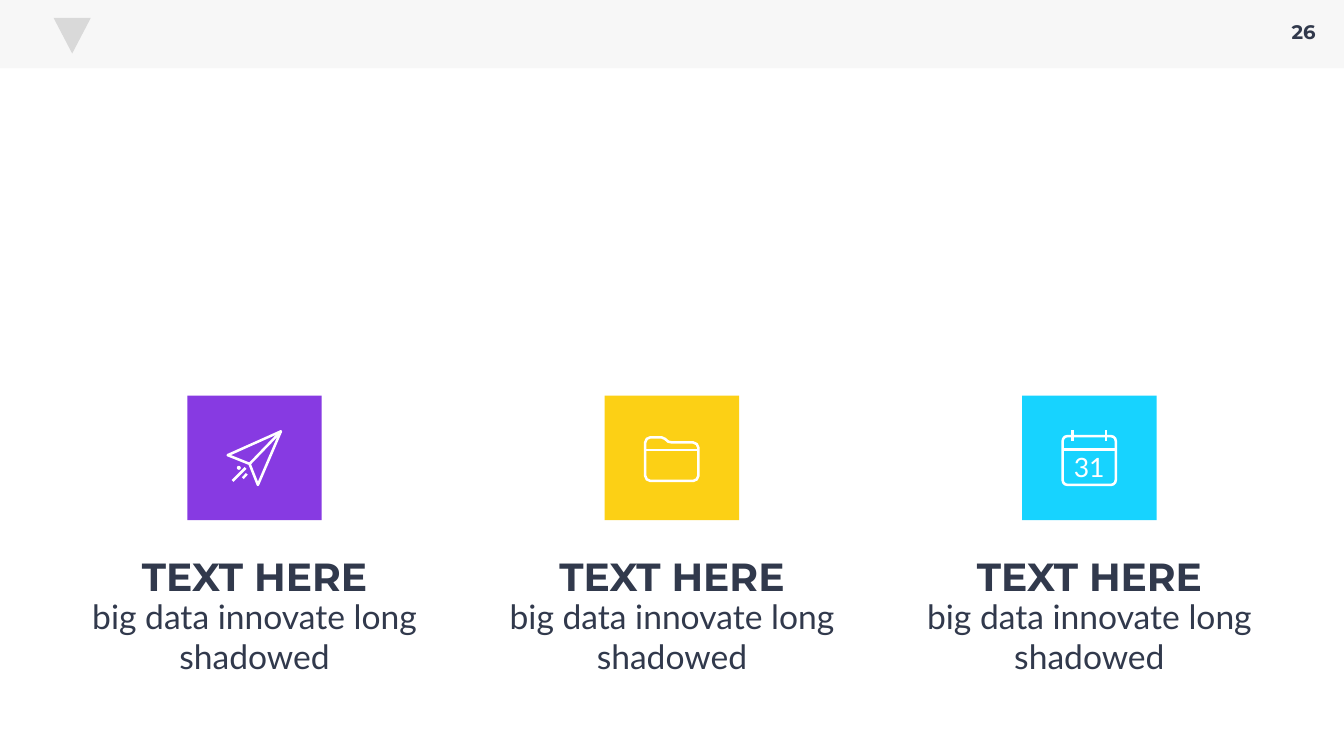
from pptx import Presentation
from pptx.dml.color import RGBColor
from pptx.enum.shapes import MSO_SHAPE
from pptx.enum.text import MSO_ANCHOR, PP_ALIGN
from pptx.util import Cm, Pt
from lxml import etree

RECTANGLE = MSO_SHAPE.RECTANGLE
ROUNDED = MSO_SHAPE.ROUNDED_RECTANGLE
OVAL = MSO_SHAPE.OVAL
MERGE = MSO_SHAPE.FLOWCHART_MERGE
CENTER = PP_ALIGN.CENTER
MIDDLE = MSO_ANCHOR.MIDDLE
EFFECT_LIST = "{http://schemas.openxmlformats.org/drawingml/2006/main}effectLst"
STRAIGHT = 1

WHITE = "FFFFFF"
INK = "31394C"
ICON_LINE = Pt(1.8)

presentation = Presentation()
presentation.slide_width = Cm(33.87)
presentation.slide_height = Cm(19.05)
slide = presentation.slides.add_slide(presentation.slide_layouts[6])
shapes = slide.shapes


def color(hex_string):
    return RGBColor.from_string(hex_string)


def add_text(text, left, top, width, height, size, font, bold=False, ink=INK):
    box = shapes.add_textbox(Cm(left), Cm(top), Cm(width), Cm(height))
    frame = box.text_frame
    frame.word_wrap = True
    frame.text = text
    paragraph = frame.paragraphs[0]
    paragraph.alignment = CENTER
    run = paragraph.runs[0]
    run.font.size = Pt(size)
    run.font.name = font
    run.font.bold = bold
    run.font.color.rgb = color(ink)
    return box


TILE_LEFT, TILE_TOP, PITCH = 4.72, 9.97, 10.52
TILE_WIDTH, TILE_HEIGHT = 3.39, 3.14
plane_left, folder_left, calendar_left = [TILE_LEFT + i * PITCH for i in range(3)]
tile_colors = {plane_left: "873AE2", folder_left: "FCD015", calendar_left: "17D3FF"}

blocks = [
    (RECTANGLE, 0, 0, 33.87, 1.72, "F7F7F7"),
    (MERGE, 1.35, 0.45, 0.94, 0.9, "D9D9D9"),
]
for tile_left, fill in tile_colors.items():
    blocks.append((RECTANGLE, tile_left, TILE_TOP, TILE_WIDTH, TILE_HEIGHT, fill))
blocks.append((OVAL, plane_left + 1.25, TILE_TOP + 1.77, 0.1, 0.1, WHITE))

for kind, left, top, width, height, fill in blocks:
    shape = shapes.add_shape(kind, Cm(left), Cm(top), Cm(width), Cm(height))
    shape.shadow.inherit = False
    shape.fill.solid()
    shape.fill.fore_color.rgb = color(fill)
    shape.line.fill.background()

add_text("26", 32.26, 0.38, 1.19, 0.74, 14, "Montserrat", True)

plane = [(2.36, 0.9), (1.02, 1.5), (1.57, 1.72), (1.78, 2.25)]
folder = [
    (1.02, 1.18), (1.06, 1.09), (1.15, 1.05), (1.43, 1.05), (1.52, 1.09),
    (1.6, 1.16), (1.7, 1.18), (2.23, 1.18), (2.32, 1.22), (2.36, 1.31),
    (2.36, 2.02), (2.32, 2.11), (2.23, 2.15), (1.15, 2.15), (1.06, 2.11),
    (1.02, 2.02),
]
outlines = []
for tile_left, points in [(plane_left, plane), (folder_left, folder)]:
    corners = [(Cm(tile_left + x), Cm(TILE_TOP + y)) for x, y in points]
    builder = shapes.build_freeform(*corners[0])
    builder.add_line_segments(corners[1:], close=True)
    outlines.append(builder.convert_to_shape())

calendar = shapes.add_shape(
    ROUNDED, Cm(calendar_left + 1.02), Cm(TILE_TOP + 1.02), Cm(1.34), Cm(1.23)
)
calendar.adjustments[0] = 0.1
outlines.append(calendar)

for shape in outlines:
    shape.shadow.inherit = False
    shape.fill.background()
    shape.line.color.rgb = color(WHITE)
    shape.line.width = ICON_LINE

strokes = [
    (plane_left, 1.57, 1.72, 2.36, 0.9),
    (plane_left, 1.47, 1.82, 1.14, 2.15),
    (plane_left, 1.5, 1.97, 1.4, 2.08),
    (folder_left, 1.02, 1.37, 2.36, 1.37),
    (calendar_left, 1.02, 1.35, 2.36, 1.35),
    (calendar_left, 1.27, 0.87, 1.27, 1.15),
    (calendar_left, 2.11, 0.87, 2.11, 1.15),
]
for tile_left, x1, y1, x2, y2 in strokes:
    connector = shapes.add_connector(
        STRAIGHT,
        Cm(tile_left + x1), Cm(TILE_TOP + y1),
        Cm(tile_left + x2), Cm(TILE_TOP + y2),
    )
    connector.line.color.rgb = color(WHITE)
    connector.line.width = ICON_LINE
    etree.SubElement(connector._element.spPr, EFFECT_LIST)

day = add_text("31", calendar_left + 1.02, TILE_TOP + 1.35, 1.34, 0.9, 19, "Lato", ink=WHITE)
day_frame = day.text_frame
day_frame.margin_left = day_frame.margin_right = 0
day_frame.margin_top = day_frame.margin_bottom = 0
day_frame.vertical_anchor = MIDDLE

TEXT_WIDTH = 10.03
for tile_left in tile_colors:
    text_left = tile_left + (TILE_WIDTH - TEXT_WIDTH) / 2
    add_text("big data innovate long shadowed", text_left, 14.88, TEXT_WIDTH, 2.31, 24, "Lato")
    add_text("TEXT HERE", text_left, 13.79, TEXT_WIDTH, 1.45, 28, "Montserrat", True)

presentation.save("out.pptx")
